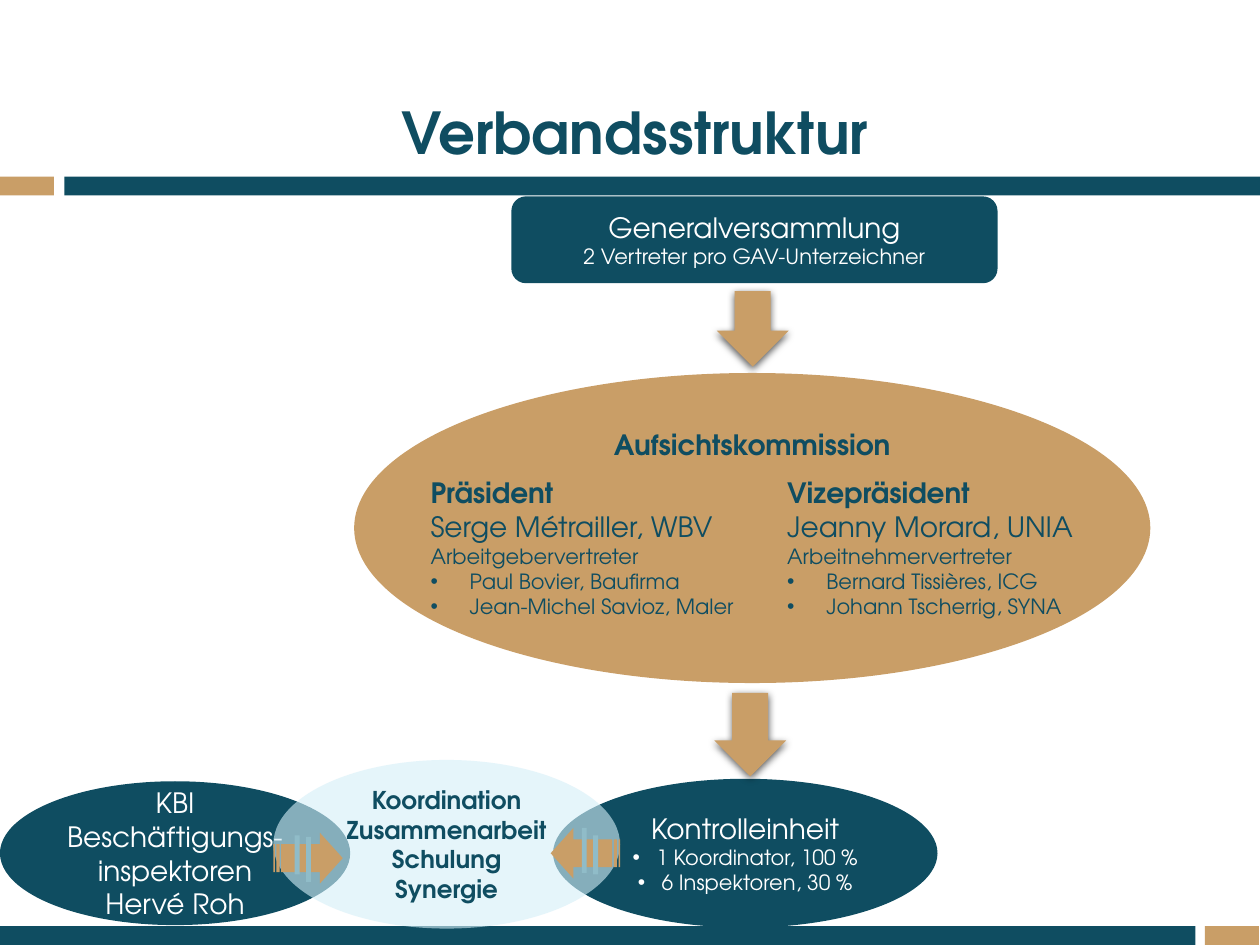
import pptx
import pptx.dml.color
import pptx.enum.shapes
import pptx.enum.text
import pptx.oxml.ns
import pptx.util
from lxml import etree

Cm = pptx.util.Cm
Pt = pptx.util.Pt
qn = pptx.oxml.ns.qn
MSO = pptx.enum.shapes.MSO_SHAPE
ANCHOR = pptx.enum.text.MSO_ANCHOR
ALIGN = pptx.enum.text.PP_ALIGN

FONT = "TeX Gyre Adventor"
COLORS = {
    "petrol": "0F4D61",
    "sand": "C99E67",
    "ice": "D4EFF8",
    "stripe": "90BCC8",
    "white": "FFFFFF",
    "shadow": "000000",
}


def rgb(name):
    """Return the named colour."""
    return pptx.dml.color.RGBColor.from_string(COLORS[name])


def add_shape(slide, kind, box, color, rotation=0):
    """Add a borderless filled shape; box is left, top, width, height in cm."""
    sp = slide.shapes.add_shape(kind, *map(Cm, box))
    sp.shadow.inherit = False
    sp.fill.solid()
    sp.fill.fore_color.rgb = rgb(color)
    sp.line.fill.background()
    sp.rotation = rotation
    return sp


def set_alpha(sp, percent):
    """Make a solid fill partly transparent."""
    clr = sp._element.spPr.find(qn("a:solidFill")).find(qn("a:srgbClr"))
    etree.SubElement(clr, qn("a:alpha"), val=str(percent * 1000))


def add_shadow(sp):
    """Give a shape a soft shadow below it."""
    effects = sp._element.spPr.find(qn("a:effectLst"))
    shadow = etree.SubElement(
        effects, qn("a:outerShdw"), blurRad=str(Pt(4.5)), dist=str(Pt(1.5)),
        dir="5400000", algn="ctr", rotWithShape="0")
    clr = etree.SubElement(shadow, qn("a:srgbClr"), val=COLORS["shadow"])
    etree.SubElement(clr, qn("a:alpha"), val="63000")


def add_bullet(p, indent):
    """Give a paragraph a round bullet with a hanging indent in cm."""
    pPr = p._p.get_or_add_pPr()
    pPr.set("marL", str(Cm(indent)))
    pPr.set("indent", str(-Cm(indent)))
    etree.SubElement(pPr, qn("a:buFont"), typeface="Arial")
    etree.SubElement(pPr, qn("a:buChar"), char="•")


def write(sp, lines, color, align=ALIGN.CENTER, anchor=ANCHOR.MIDDLE):
    """Fill a shape with lines of text, size, bold and bullet indent."""
    tf = sp.text_frame
    tf.word_wrap = True
    tf.vertical_anchor = anchor
    for i, (text, size, bold, indent) in enumerate(lines):
        p = tf.add_paragraph() if i else tf.paragraphs[0]
        p.text = text
        p.alignment = align
        if indent:
            add_bullet(p, indent)
        for r in p.runs:
            r.font.name = FONT
            r.font.size = Pt(size)
            r.font.bold = bold
            r.font.color.rgb = rgb(color)


def add_frame(slide):
    """Add the title and the bars above and below the content."""
    for left, top, width, color in [
        (1.3, 3.56, 24.1, "petrol"),
        (0, 3.56, 1.09, "sand"),
        (0, 18.67, 24.1, "petrol"),
        (24.29, 18.67, 1.09, "sand"),
    ]:
        add_shape(slide, MSO.RECTANGLE, (left, top, width, 0.38), color)
    title = slide.shapes.add_textbox(Cm(0.9), Cm(1.45), Cm(23.8), Cm(2.4))
    write(title, [("Verbandsstruktur", 33, True, 0)], "petrol")


def add_down_arrow(slide, left, top, height):
    """Add a shadowed arrow to the next level."""
    add_shadow(add_shape(slide, MSO.DOWN_ARROW, (left, top, 1.45, height), "sand"))


def add_office(slide, left, width, role, person, group, members):
    """Add one column of the commission with its head and members."""
    box = slide.shapes.add_textbox(Cm(left), Cm(9.47), Cm(width), Cm(3.18))
    lines = [(role, 16, True, 0), (person, 16, False, 0), (group, 12, False, 0)]
    lines += [(member, 12, False, 0.79) for member in members]
    write(box, lines, "petrol", ALIGN.LEFT, ANCHOR.TOP)


def add_striped_arrow(slide, left, top, rotation, bars):
    """Add a striped arrow with two thin bars across it."""
    arrow = add_shape(slide, MSO.STRIPED_RIGHT_ARROW, (left, top, 1.4, 1.02), "sand", rotation)
    arrow.adjustments[0] = 0.55
    arrow.adjustments[1] = 0.45
    for x, y, height in bars:
        add_shape(slide, MSO.RECTANGLE, (x, y, 0.1, height), "stripe")


def main():
    """Build the slide and save it."""
    prs = pptx.Presentation()
    prs.slide_width = Cm(25.4)
    prs.slide_height = Cm(19.05)
    s = prs.slides.add_slide(prs.slide_layouts[6])
    add_frame(s)

    assembly = add_shape(s, MSO.ROUNDED_RECTANGLE, (10.31, 3.96, 9.8, 1.75), "petrol")
    write(assembly, [("Generalversammlung", 16, False, 0),
                     ("2 Vertreter pro GAV-Unterzeichner", 12, False, 0)], "white")
    add_down_arrow(s, 14.45, 5.87, 1.52)

    commission = add_shape(s, MSO.OVAL, (7.14, 7.52, 16.05, 6.25), "sand")
    write(commission, [("Aufsichtskommission", 16, True, 0)], "petrol", anchor=ANCHOR.TOP)
    commission.text_frame.margin_top = Cm(0.18)
    add_office(s, 15.62, 6.32, "Vizepräsident", "Jeanny Morard, UNIA",
               "Arbeitnehmervertreter", ["Bernard Tissières, ICG", "Johann Tscherrig, SYNA"])
    add_office(s, 8.43, 6.76, "Präsident", "Serge Métrailler, WBV",
               "Arbeitgebervertreter", ["Paul Bovier, Baufirma", "Jean-Michel Savioz, Maler"])

    control = add_shape(s, MSO.OVAL, (11.15, 15.7, 7.75, 3), "petrol")
    write(control, [("Kontrolleinheit", 16, False, 0),
                    ("1 Koordinator, 100 %", 12, False, 0.48),
                    ("6 Inspektoren, 30 %", 12, False, 0.48)], "white")
    add_down_arrow(s, 14.4, 13.97, 1.68)

    inspectors = add_shape(s, MSO.OVAL, (0, 15.75, 7.06, 2.9), "petrol")
    write(inspectors, [(text, 16, False, 0) for text in
                       ("KBI", "Beschäftigungs-inspektoren", "Hervé Roh")], "white")

    coordination = add_shape(s, MSO.OVAL, (5.51, 15.32, 6.99, 3.4), "ice")
    set_alpha(coordination, 60)
    write(coordination, [(text, 14, True, 0) for text in
                         ("Koordination Zusammenarbeit", "Schulung", "Synergie")], "petrol")

    add_striped_arrow(s, 5.51, 16.79, 0, [(6.17, 16.87, 0.91), (5.94, 16.84, 0.79)])
    add_striped_arrow(s, 11.1, 16.69, 180, [(11.73, 16.69, 0.91), (11.96, 16.84, 0.79)])
    prs.save("out.pptx")


if __name__ == "__main__":
    main()
